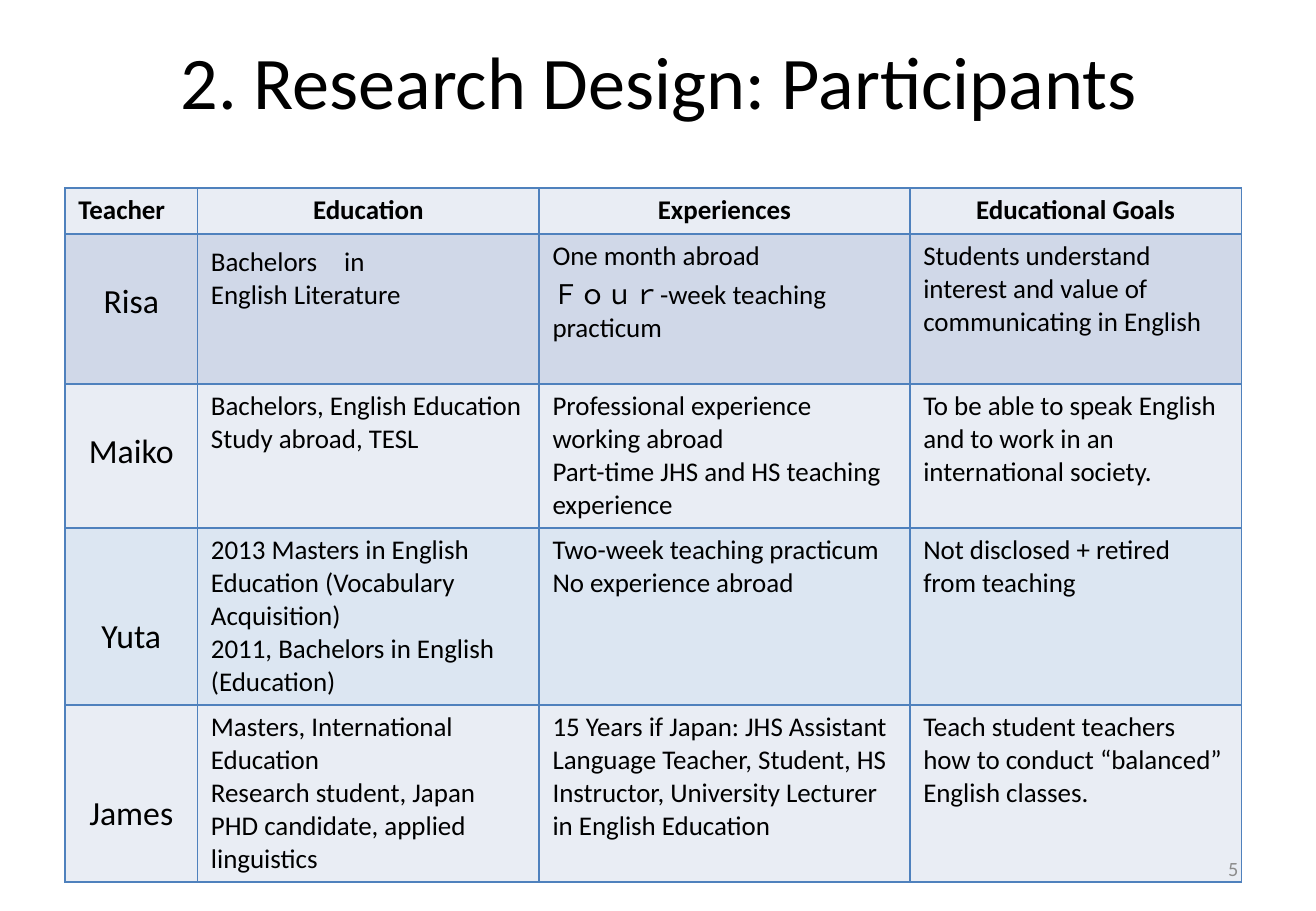
from dataclasses import dataclass

from lxml import etree
from pptx import Presentation
from pptx import util as u
from pptx.dml.color import RGBColor
from pptx.enum import text
from pptx.oxml import ns

FONT = "Calibri"
BLACK, GREY, BLUE = "000000", "8C8C8C", "4F81BD"
PALE, BAND, SKY = "E9EDF4", "D0D8E8", "DCE6F2"
LEFT, MID, RIGHT = text.PP_ALIGN.LEFT, text.PP_ALIGN.CENTER, text.PP_ALIGN.RIGHT

HEADS = ["Teacher", "Education", "Experiences", "Educational Goals"]
WIDTHS = [2.77, 7.14, 7.75, 6.93]
HEAD_TALL = 0.96
PAD_X, PAD_Y = 0.28, 0.13
NAME_LINE = 0.86


@dataclass
class Person:
    name: str
    cells: list[str]
    tall: float
    fill: str
    drop: int  # lines left free above the name


PEOPLE = [
    Person("Risa", [
        "Bachelors　in\nEnglish Literature",
        "One month abroad\nＦｏｕｒ-week teaching practicum",
        "Students understand interest and value of communicating in English",
    ], 3.14, BAND, 1),
    Person("Maiko", [
        "Bachelors, English Education\nStudy abroad, TESL",
        "Professional experience working abroad\n"
        "Part-time JHS and HS teaching experience",
        "To be able to speak English and to work in an international society.",
    ], 3.01, PALE, 1),
    Person("Yuta", [
        "2013 Masters in English Education (Vocabulary Acquisition)\n"
        "2011, Bachelors in English (Education)",
        "Two-week teaching practicum\nNo experience abroad",
        "Not disclosed + retired from teaching",
    ], 3.7, SKY, 2),
    Person("James", [
        "Masters, International Education\nResearch student, Japan\n"
        "PHD candidate, applied linguistics",
        "15 Years if Japan: JHS Assistant Language Teacher, Student, HS "
        "Instructor, University Lecturer in English Education",
        "Teach student teachers how to conduct “balanced” English classes.",
    ], 3.7, PALE, 2),
]


def tint(code: str) -> RGBColor:
    return RGBColor.from_string(code)


def write(frame, words: str, size: float, align, color: str = BLACK,
          bold: bool = False) -> None:
    frame.text = words
    for para in frame.paragraphs:
        para.alignment = align
        for run in para.runs:
            run.font.name = FONT
            run.font.size = u.Pt(size)
            run.font.bold = bold
            run.font.color.rgb = tint(color)


def add_label(slide, box: tuple, words: str, size: float, align, color: str) -> None:
    frame = slide.shapes.add_textbox(*map(u.Cm, box)).text_frame
    frame.word_wrap = True
    frame.vertical_anchor = text.MSO_ANCHOR.MIDDLE
    write(frame, words, size, align, color)


def edge(cell) -> None:
    """Draw a thin blue line on all four sides of the cell."""
    props = cell._tc.get_or_add_tcPr()
    for spot, side in enumerate(("lnL", "lnR", "lnT", "lnB")):
        line = etree.Element(ns.qn(f"a:{side}"), w=str(u.Pt(1)))
        fill = etree.SubElement(line, ns.qn("a:solidFill"))
        etree.SubElement(fill, ns.qn("a:srgbClr"), val=BLUE)
        props.insert(spot, line)


def fill_cell(cell, words: str, fill: str, size: float = 16, align=LEFT,
              bold: bool = False, drop: int = 0) -> None:
    cell.margin_left = cell.margin_right = u.Cm(PAD_X)
    cell.margin_top = u.Cm(PAD_Y + drop * NAME_LINE)
    cell.margin_bottom = u.Cm(PAD_Y)
    cell.fill.solid()
    cell.fill.fore_color.rgb = tint(fill)
    edge(cell)
    write(cell.text_frame, words, size, align, bold=bold)


def add_grid(slide) -> None:
    talls = [HEAD_TALL] + [p.tall for p in PEOPLE]
    grid = slide.shapes.add_table(
        len(talls), len(HEADS), u.Cm(1.36), u.Cm(3.93),
        u.Cm(sum(WIDTHS)), u.Cm(sum(talls))).table
    for col, wide in zip(grid.columns, WIDTHS):
        col.width = u.Cm(wide)
    for row, tall in zip(grid.rows, talls):
        row.height = u.Cm(tall)

    for c, head in enumerate(HEADS):
        fill_cell(grid.cell(0, c), head, PALE, align=MID if c else LEFT, bold=True)
    for r, p in enumerate(PEOPLE, 1):
        fill_cell(grid.cell(r, 0), p.name, p.fill, 20, MID, drop=p.drop)
        for c, words in enumerate(p.cells, 1):
            fill_cell(grid.cell(r, c), words, p.fill)


def main() -> None:
    deck = Presentation()
    deck.slide_width, deck.slide_height = u.Cm(27.51), u.Cm(19.05)
    slide = deck.slides.add_slide(deck.slide_layouts[6])
    add_label(slide, (1.4, 0.08, 24.77, 3.18),
              "2. Research Design: Participants", 44, MID, BLACK)
    add_grid(slide)
    add_label(slide, (19.71, 17.65, 6.43, 1.02), "5", 12, RIGHT, GREY)
    deck.save("out.pptx")


if __name__ == "__main__":
    main()
